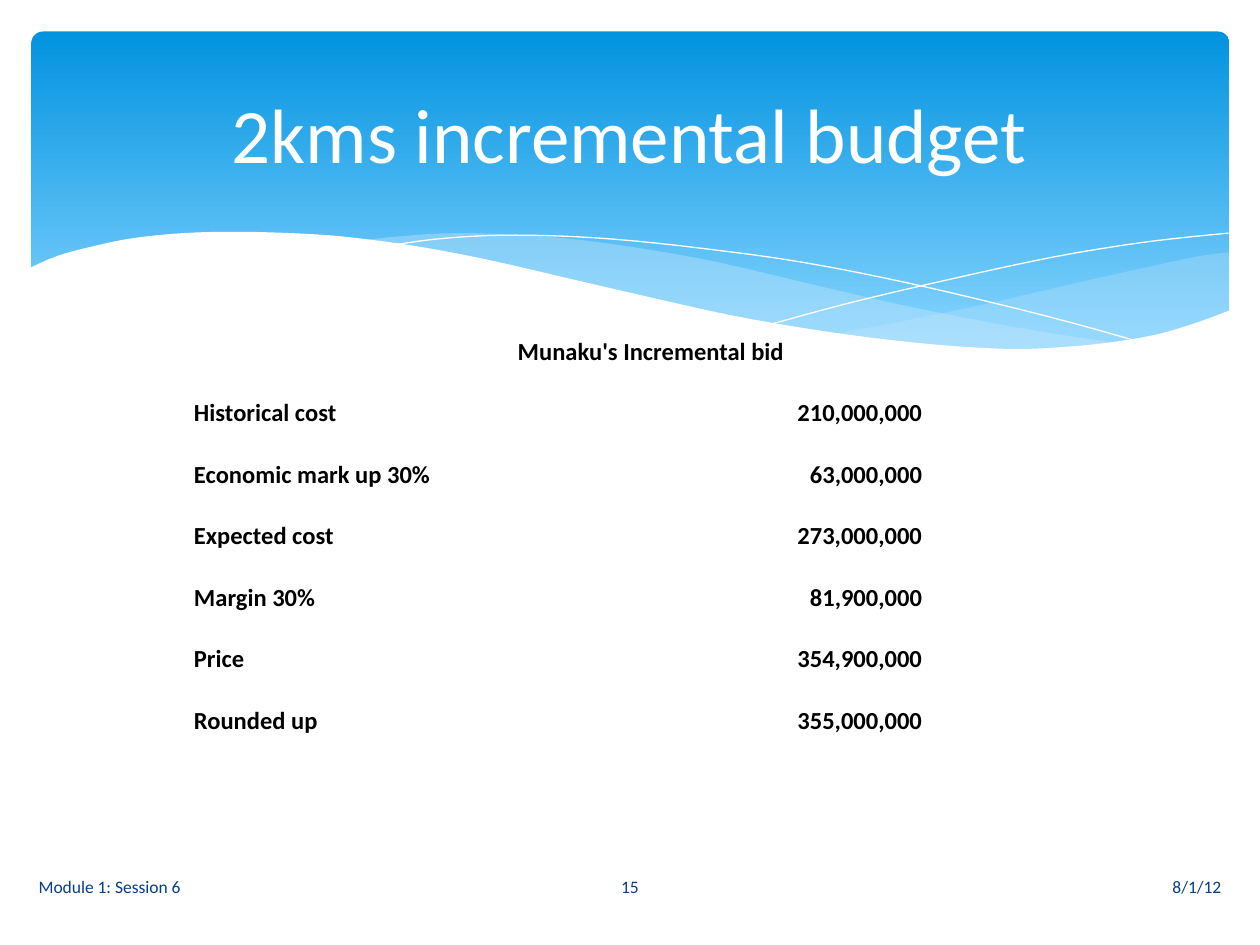
import collections

import lxml.etree
import pptx
import pptx.dml.color
import pptx.enum.shapes
import pptx.enum.text
import pptx.oxml.ns
import pptx.util

Cm = pptx.util.Cm
ALIGN = pptx.enum.text.PP_ALIGN
ANCHOR = pptx.enum.text.MSO_ANCHOR
Box = collections.namedtuple("Box", "left top width height")

COLORS = {"sky": "0293E0", "pale_sky": "83D3FE", "mist": "C6E7FC",
          "white": "FFFFFF", "black": "000000", "navy": "073E87"}
FONT = "Calibri"
PLAIN_TABLE_STYLE = "{2D5ABB26-0587-4C30-8999-92F81FD0307C}"
WAVE_UNIT = Cm(0.0254)

# Wave points are counted in WAVE_UNIT from the corner of the header.
RIGHT_SWELL = [
    [(951, 175), (923, 179), (881, 188), (836, 198), (754, 217), (681, 232), (636, 240)],
    [(636, 240), (680, 246), (732, 251), (778, 253), (829, 251), (872, 245), (917, 234),
     (951, 222)],
]
LEFT_SWELL = [
    [(868, 248), (812, 240), (750, 229), (681, 215), (604, 197), (544, 183), (489, 173),
     (440, 166), (395, 162), (336, 160), (288, 163), (261, 166)],
    [(261, 166), (317, 174), (379, 186), (424, 197), (505, 215), (576, 230), (640, 241),
     (697, 249), (748, 252), (793, 253), (832, 252), (868, 248)],
]
FALLING_LINE = [
    [(284, 170), (319, 165), (362, 162), (408, 162), (464, 165), (531, 172), (611, 183),
     (702, 201), (806, 226), (882, 247)],
]
RISING_LINE = [[(588, 232), (647, 216), (723, 198), (811, 179), (885, 167), (950, 160)]]
WHITE_WAVE = [
    [(952, 221), (925, 231), (895, 240), (862, 246), (825, 250), (784, 252), (736, 250),
     (683, 245), (623, 237), (554, 225), (478, 208), (422, 195), (366, 182), (315, 172),
     (267, 165), (225, 161), (168, 159), (121, 160), (81, 164), (51, 170), (21, 178),
     (-2, 188)],
    [(-2, 304), (952, 304)],
]

BID_ROWS = [
    ("Historical cost", "210,000,000"),
    ("Economic mark up 30%", "63,000,000"),
    ("Expected cost", "273,000,000"),
    ("Margin 30%", "81,900,000"),
    ("Price", "354,900,000"),
    ("Rounded up", "355,000,000"),
]


def rgb(name):
    return pptx.dml.color.RGBColor.from_string(COLORS[name])


def write_text(frame, text, size, color, align=ALIGN.LEFT, bold=False):
    para = frame.paragraphs[0]
    para.alignment = align
    span = para.add_run()
    span.text = text
    span.font.name = FONT
    span.font.size = pptx.util.Pt(size)
    span.font.bold = bold
    span.font.color.rgb = rgb(color)


def add_text(page, box, text, **style):
    frame = page.shapes.add_textbox(*box).text_frame
    frame.word_wrap = True
    frame.vertical_anchor = ANCHOR.MIDDLE
    write_text(frame, text, **style)


def smooth_curve(points, steps=4):
    """Return a Catmull-Rom curve through the points."""
    padded = [points[0], *points, points[-1]]
    curve = [points[0]]
    for a, b, c, d in zip(padded, padded[1:], padded[2:], padded[3:]):
        for step in range(1, steps + 1):
            t = step / steps
            curve.append(tuple(
                q + t / 2 * (r - p + t * (2 * p - 5 * q + 4 * r - s
                                          + t * (3 * q - p - 3 * r + s)))
                for p, q, r, s in zip(a, b, c, d)))
    return curve


def add_wave(page, box, curves, fill=None, opacity=100):
    """Draw a filled wave, or a white hairline where no fill is given."""
    points = [(round(x * WAVE_UNIT), round(y * WAVE_UNIT))
              for curve in curves for x, y in smooth_curve(curve)]
    builder = page.shapes.build_freeform(*points[0], scale=1.0)
    builder.add_line_segments(points[1:], close=fill is not None)
    wave = builder.convert_to_shape(box.left, box.top)
    wave.shadow.inherit = False
    if fill is None:
        wave.fill.background()
        wave.line.color.rgb = rgb("white")
        wave.line.width = 0
        return
    wave.line.fill.background()
    wave.fill.solid()
    wave.fill.fore_color.rgb = rgb(fill)
    if opacity < 100:
        color = wave.fill._xPr.find(".//" + pptx.oxml.ns.qn("a:srgbClr"))
        alpha = lxml.etree.SubElement(color, pptx.oxml.ns.qn("a:alpha"))
        alpha.set("val", str(opacity * 1000))


def add_header(page, box):
    panel = page.shapes.add_shape(
        pptx.enum.shapes.MSO_SHAPE.ROUNDED_RECTANGLE, *box)
    panel.adjustments[0] = 0.034
    panel.shadow.inherit = False
    panel.line.fill.background()
    panel.fill.gradient()
    panel.fill.gradient_angle = 270
    for stop, color, position in zip(panel.fill.gradient_stops,
                                     ("sky", "pale_sky"), (0, 0.9)):
        stop.color.rgb = rgb(color)
        stop.position = position

    add_wave(page, box, RIGHT_SWELL, "mist", 29)
    add_wave(page, box, LEFT_SWELL, "mist", 40)
    add_wave(page, box, FALLING_LINE)
    add_wave(page, box, RISING_LINE)
    add_wave(page, box, WHITE_WAVE, "white")

    title_box = Box(box.left + Cm(0.63), box.top + Cm(0.3), Cm(22.86), Cm(3.48))
    add_text(page, title_box, "2kms incremental budget",
             size=44, color="white", align=ALIGN.CENTER)


def add_footer(page, box):
    side, middle = Cm(10.52), Cm(3.23)
    parts = [
        (0, side, "Module 1: Session 6", ALIGN.LEFT),
        ((box.width - middle) // 2, middle, "15", ALIGN.CENTER),
        (box.width - side, side, "8/1/12", ALIGN.RIGHT),
    ]
    for offset, width, text, align in parts:
        add_text(page, Box(box.left + offset, box.top, width, box.height), text,
                 size=10, color="navy", align=align)


def fill_cell(cell, text, align, left=0, right=0):
    cell.fill.background()
    cell.vertical_anchor = ANCHOR.BOTTOM
    cell.margin_left, cell.margin_right = left, right
    cell.margin_top = cell.margin_bottom = 0
    write_text(cell.text_frame, text, size=14, color="black", align=align, bold=True)


def add_bid_table(page, box):
    table = page.shapes.add_table(len(BID_ROWS) + 1, 2, *box).table
    table.first_row = table.horz_banding = False
    table._tbl.tblPr.find(pptx.oxml.ns.qn("a:tableStyleId")).text = PLAIN_TABLE_STYLE
    table.columns[0].width = Cm(11.94)
    table.columns[1].width = box.width - Cm(11.94)

    heading = table.cell(0, 0)
    heading.merge(table.cell(0, 1))
    fill_cell(heading, "Munaku's Incremental bid", ALIGN.CENTER)
    for row, (label, amount) in enumerate(BID_ROWS, start=1):
        fill_cell(table.cell(row, 0), label, ALIGN.LEFT, left=Cm(0.1))
        fill_cell(table.cell(row, 1), amount, ALIGN.RIGHT, right=Cm(3.84))


def main():
    deck = pptx.Presentation()
    deck.slide_width, deck.slide_height = Cm(25.4), Cm(19.05)
    page = deck.slides.add_slide(deck.slide_layouts[6])
    add_header(page, Box(Cm(0.635), Cm(0.635), Cm(24.15), Cm(6.86)))
    add_footer(page, Box(Cm(0.53), Cm(17.37), Cm(24.34), Cm(1.02)))
    add_bid_table(page, Box(Cm(3.81), Cm(6.15), Cm(18.62), Cm(8.69)))
    deck.save("out.pptx")


if __name__ == "__main__":
    main()
